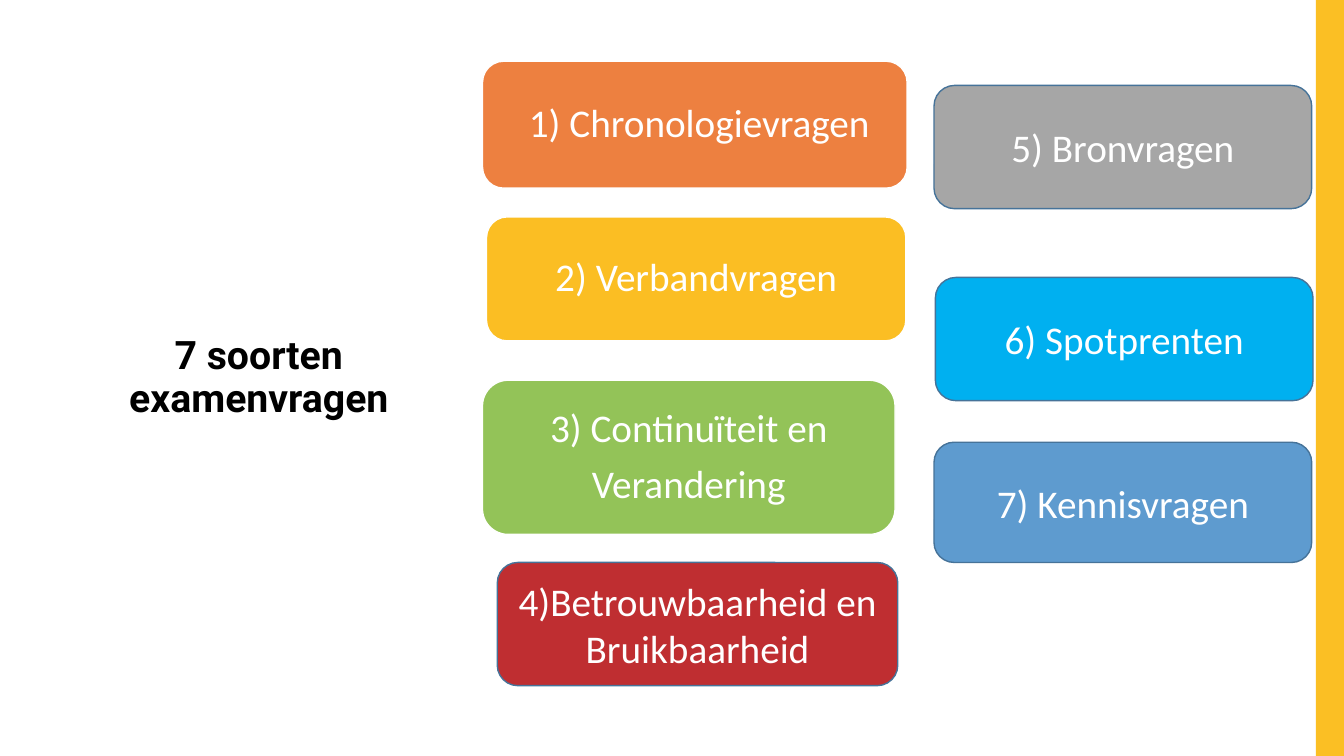
from dataclasses import dataclass

from pptx import Presentation
from pptx.dml.color import RGBColor
from pptx.enum.shapes import MSO_SHAPE
from pptx.enum.text import MSO_ANCHOR, PP_ALIGN
from pptx.util import Inches, Pt


@dataclass(frozen=True)
class Theme:
    title_font: str = "Roboto"
    body_font: str = "Calibri"
    text_size: int = 28
    black: str = "000000"
    white: str = "FFFFFF"
    outline: str = "467399"
    accent: str = "FBBF24"
    orange: str = "ED8040"
    yellow: str = "FBBE23"
    green: str = "93C358"
    red: str = "BF2E31"
    grey: str = "A6A6A6"
    cyan: str = "00B0F0"
    blue: str = "5E9BCF"


class QuestionSlide:
    def __init__(self, presentation, theme):
        self.theme = theme
        self.width = presentation.slide_width
        self.height = presentation.slide_height
        self.slide = presentation.slides.add_slide(presentation.slide_layouts[5])

    def area(self, left, top, width, height):
        """Turn percentages of the slide into left, top, width and height."""
        return (round(self.width * left / 100), round(self.height * top / 100),
                round(self.width * width / 100), round(self.height * height / 100))

    def set_text(self, frame, text, font, color, bold=False, line_spacing=1.0, space_after=0):
        frame.word_wrap = True
        frame.vertical_anchor = MSO_ANCHOR.MIDDLE
        frame.text = text
        for paragraph in frame.paragraphs:
            paragraph.alignment = PP_ALIGN.CENTER
            paragraph.line_spacing = line_spacing
            paragraph.space_after = Pt(space_after)
            for run in paragraph.runs:
                run.font.name = font
                run.font.size = Pt(self.theme.text_size)
                run.font.bold = bold
                run.font.color.rgb = RGBColor.from_string(color)

    def title(self, text, *place):
        heading = self.slide.shapes.title
        heading.left, heading.top, heading.width, heading.height = self.area(*place)
        self.set_text(heading.text_frame, text, self.theme.title_font, self.theme.black,
                      bold=True, line_spacing=0.9)

    def block(self, preset, fill, *place):
        block = self.slide.shapes.add_shape(preset, *self.area(*place))
        block.shadow.inherit = False
        block.fill.solid()
        block.fill.fore_color.rgb = RGBColor.from_string(fill)
        block.line.fill.background()
        return block

    def side_bar(self, *place):
        self.block(MSO_SHAPE.RECTANGLE, self.theme.accent, *place)

    def card(self, text, fill, outline, place, **spacing):
        card = self.block(MSO_SHAPE.ROUNDED_RECTANGLE, fill, *place)
        card.line.color.rgb = RGBColor.from_string(outline)
        card.line.width = Pt(1)
        self.set_text(card.text_frame, text, self.theme.body_font, self.theme.white, **spacing)


def main():
    presentation = Presentation()
    presentation.slide_width = Inches(13.33)
    presentation.slide_height = Inches(7.5)
    theme = Theme()
    page = QuestionSlide(presentation, theme)

    page.side_bar(97.9, 0, 2.1, 100)
    page.title("7 soorten examenvragen", 5.2, 9.3, 28.1, 81.5)

    skill_questions = [
        (" 1) Chronologievragen", theme.orange, (35.9, 8.1, 31.6, 16.8)),
        ("2) Verbandvragen", theme.yellow, (36.2, 28.7, 31.2, 16.4)),
        ("3) Continuïteit en\nVerandering", theme.green, (35.9, 50.3, 30.7, 20.4)),
    ]
    for text, fill, place in skill_questions:
        page.card(text, fill, theme.white, place, line_spacing=0.9, space_after=9.8)

    source_questions = [
        ("4)Betrouwbaarheid en Bruikbaarheid", theme.red, (37, 74.4, 29.8, 16.3)),
        ("5) Bronvragen", theme.grey, (69.5, 11.3, 28.1, 16.3)),
        ("6) Spotprenten", theme.cyan, (69.6, 36.7, 28.1, 16.3)),
        ("7) Kennisvragen", theme.blue, (69.5, 58.5, 28.1, 15.9)),
    ]
    for text, fill, place in source_questions:
        page.card(text, fill, theme.outline, place)

    presentation.save("out.pptx")


if __name__ == "__main__":
    main()
